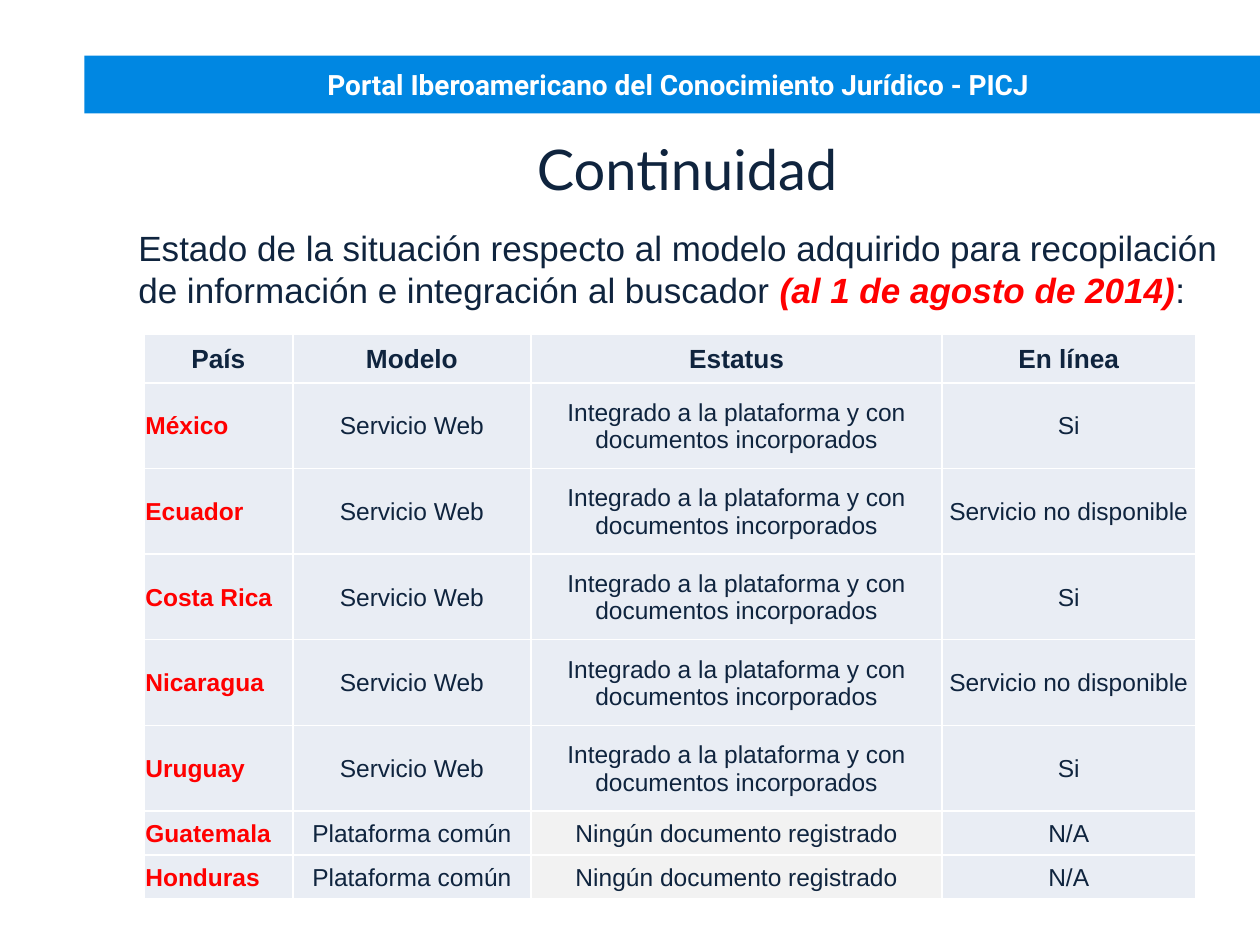
from lxml.etree import SubElement
from pptx import Presentation
from pptx.dml.color import RGBColor
from pptx.enum.shapes import MSO_SHAPE
from pptx.enum.text import MSO_ANCHOR, PP_ALIGN
from pptx.oxml.ns import qn
from pptx.util import Cm, Pt

HUES = {"bar": "0087E2", "ink": "0F243E", "red": "FF0000",
        "white": "FFFFFF", "cell": "E9EDF4", "gray": "F2F2F2"}
WEB = ("Servicio Web", "Integrado a la plataforma y con documentos incorporados")
BASE = ("Plataforma común", "Ningún documento registrado")
DOWN = "Servicio no disponible"
ROWS = [
    ("País", "Modelo", "Estatus", "En línea"),
    ("México", *WEB, "Si"),
    ("Ecuador", *WEB, DOWN),
    ("Costa Rica", *WEB, "Si"),
    ("Nicaragua", *WEB, DOWN),
    ("Uruguay", *WEB, "Si"),
    ("Guatemala", *BASE, "N/A"),
    ("Honduras", *BASE, "N/A"),
]
WIDE = (3, 4.8, 8.28, 5.1)
HIGH = (0.99, *[1.73] * 5, *[0.89] * 2)


def tint(name):
    """Return the named colour."""
    return RGBColor.from_string(HUES[name])


def write(para, text, size=14, hue="ink", font="Arial", bold=False, slant=False):
    """Add a run of formatted text to a paragraph."""
    run = para.add_run()
    run.text = text
    face = run.font
    face.size, face.name, face.bold, face.italic = Pt(size), font, bold, slant
    face.color.rgb = tint(hue)


def indent(para, left):
    """Set the left margin of a paragraph in centimetres."""
    props = para._p.get_or_add_pPr()
    props.set("marL", str(Cm(left)))
    props.set("indent", "0")


def inset(frame):
    """Wrap the text of a frame and clear its margins."""
    frame.word_wrap = True
    frame.margin_left = frame.margin_right = 0
    frame.margin_top = frame.margin_bottom = 0


def banner(slide, x, y, w, h):
    """Draw the blue bar with the portal name."""
    bar = slide.shapes.add_shape(MSO_SHAPE.RECTANGLE, Cm(x), Cm(y), Cm(w), Cm(h))
    bar.shadow.inherit = False
    bar.fill.solid()
    bar.fill.fore_color.rgb = tint("bar")
    bar.line.fill.background()
    frame = bar.text_frame
    inset(frame)
    frame.vertical_anchor = MSO_ANCHOR.MIDDLE
    para = frame.paragraphs[0]
    para.alignment = PP_ALIGN.CENTER
    indent(para, 0.25)
    write(para, "Portal Iberoamericano del Conocimiento Jurídico - PICJ",
          size=16, hue="white", font="Roboto", bold=True)


def intro(slide, x, y, w, h):
    """Place the heading and the lead sentence."""
    frame = slide.shapes.add_textbox(Cm(x), Cm(y), Cm(w), Cm(h)).text_frame
    inset(frame)
    head, lead = frame.paragraphs[0], frame.add_paragraph()
    head.alignment = PP_ALIGN.CENTER
    lead.space_before = Pt(14)
    for para in (head, lead):
        indent(para, 0.48)
    write(head, "Continuidad", size=32, font="Lato")
    write(lead, "Estado de la situación respecto al modelo adquirido para recopilación "
          "de información e integración al buscador ", size=20)
    write(lead, "(al 1 de agosto de 2014)", size=20, hue="red", bold=True, slant=True)
    write(lead, ":", size=20)


def edge(cell):
    """Give a cell thin white borders."""
    props = cell._tc.get_or_add_tcPr()
    for spot, side in enumerate(("lnL", "lnR", "lnT", "lnB")):
        line = props.makeelement(qn(f"a:{side}"), {"w": str(Pt(1))})
        fill = SubElement(line, qn("a:solidFill"))
        SubElement(fill, qn("a:srgbClr"), val=HUES["white"])
        props.insert(spot, line)


def grid(slide, x, y, w, h):
    """Build the table of countries and their status."""
    table = slide.shapes.add_table(len(ROWS), len(WIDE), Cm(x), Cm(y), Cm(w), Cm(h)).table
    for col, size in zip(table.columns, WIDE):
        col.width = Cm(w * size / sum(WIDE))
    for row, size in zip(table.rows, HIGH):
        row.height = Cm(h * size / sum(HIGH))
    for r, row in enumerate(ROWS):
        for c, text in enumerate(row):
            cell = table.cell(r, c)
            cell.margin_left = cell.margin_right = cell.margin_top = Cm(0.03)
            cell.margin_bottom = 0
            cell.vertical_anchor = MSO_ANCHOR.MIDDLE
            cell.fill.solid()
            cell.fill.fore_color.rgb = tint("gray" if text == BASE[1] else "cell")
            edge(cell)
            name = r > 0 and c == 0
            para = cell.text_frame.paragraphs[0]
            para.alignment = PP_ALIGN.LEFT if name else PP_ALIGN.CENTER
            write(para, text, size=14 if r else 15, hue="red" if name else "ink",
                  bold=name or r == 0)


def main():
    """Build and save the slide."""
    deck = Presentation()
    deck.slide_width, deck.slide_height = Cm(25.4), Cm(19.05)
    slide = deck.slides.add_slide(deck.slide_layouts[6])
    banner(slide, 1.7, 1.12, 23.7, 1.17)
    intro(slide, 2.31, 2.72, 22.61, 15.6)
    grid(slide, 2.9, 6.73, 21.2, 11.4)
    deck.save("out.pptx")


if __name__ == "__main__":
    main()
